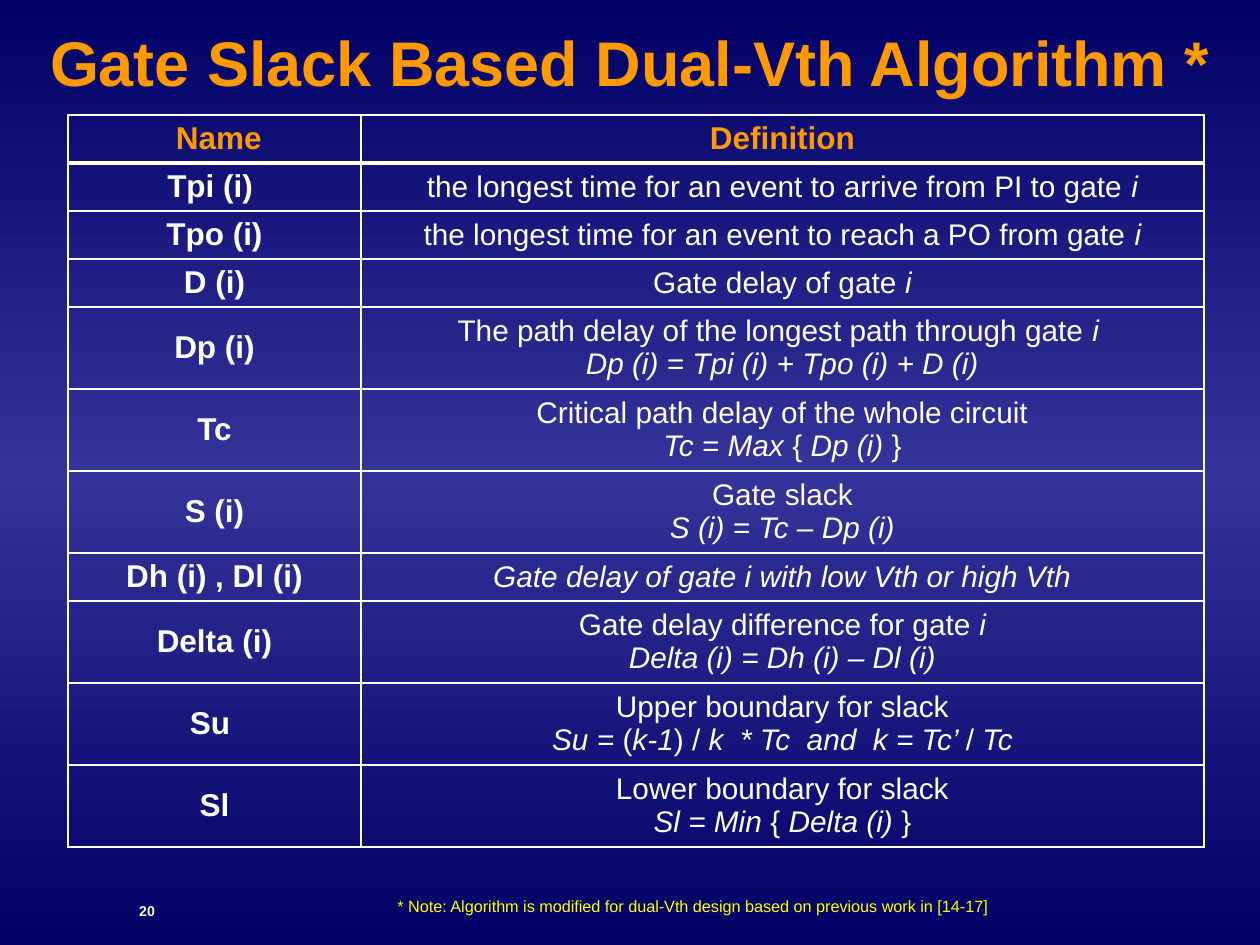
from copy import deepcopy
from dataclasses import dataclass

from pptx import Presentation
from pptx import util as u
from pptx.dml.color import RGBColor
from pptx.enum import text
from pptx.oxml import parse_xml
from pptx.oxml.ns import nsdecls, qn

PX = 914400 / 126


@dataclass(frozen=True)
class Theme:
    font: str = "Arial"
    edge: str = "000066"
    middle: str = "333399"
    accent: str = "FF9900"
    body: str = "FFFFFF"
    note: str = "FFFF00"
    title_size: int = 36
    name_size: int = 18
    definition_size: int = 17
    note_size: int = 16
    number_size: int = 14


theme = Theme()


def px(*lengths):
    return [u.Emu(round(length * PX)) for length in lengths]


def write(frame, lines, size, color, bold=False, subscript=False):
    """Write centred lines; underscores switch italics on and off."""
    frame.word_wrap = True
    for index, line in enumerate(lines):
        para = frame.paragraphs[0] if index == 0 else frame.add_paragraph()
        para.alignment = text.PP_ALIGN.CENTER
        for part, words in enumerate(line.split("_")):
            if not words:
                continue
            span = para.add_run()
            span.text = words
            span.font.name = theme.font
            span.font.size = u.Pt(size)
            span.font.bold = bold
            span.font.italic = part % 2 == 1
            span.font.color.rgb = RGBColor.from_string(color)
            if subscript:
                span.font._element.set("baseline", "-25000")


deck = Presentation()
deck.slide_width, deck.slide_height = px(1260, 945)
page = deck.slides.add_slide(deck.slide_layouts[5])

# Background: dark edges, lighter middle
backdrop = page.background.fill
backdrop.gradient()
backdrop.gradient_angle = 270
stop_list = page.element.find(".//" + qn("a:gsLst"))
stop_list.append(deepcopy(stop_list[-1]))
stops = [(0, theme.edge), (0.5, theme.middle), (1, theme.edge)]
for stop, (position, color) in zip(backdrop.gradient_stops, stops):
    stop.position = position
    stop.color.rgb = RGBColor.from_string(color)

# Title
title = page.shapes.title
title.left, title.top, title.width, title.height = px(0, 10, 1260, 103)
title.text_frame.auto_size = text.MSO_AUTO_SIZE.NONE
title.text_frame.vertical_anchor = text.MSO_ANCHOR.MIDDLE
write(title.text_frame, ["Gate Slack Based Dual-Vth Algorithm *"],
      theme.title_size, theme.accent, bold=True)

# Table of terms
terms = [
    (" Name", ["Definition"]),
    ("Tpi (i) ", ["the longest time for an event to arrive from PI to gate _i_"]),
    ("Tpo (i)", ["the longest time for an event to reach a PO from gate _i_"]),
    ("D (i)", ["Gate delay of gate _i_"]),
    ("Dp (i)", ["The path delay of the longest path through gate _i _",
                "_Dp (i) = Tpi (i) + Tpo (i) + D (i)_"]),
    ("Tc", ["Critical path delay of the whole circuit",
            "_Tc = Max _{ _Dp (i)_ }"]),
    ("S (i)", ["Gate slack", "_S (i) = Tc – Dp (i)_"]),
    ("Dh (i) , Dl (i)", ["_Gate delay of gate i with low Vth or high Vth_"]),
    ("Delta (i)", ["Gate delay difference for gate _i_",
                   "_Delta (i) = Dh (i) – Dl (i)_"]),
    ("Su ", ["Upper boundary for slack",
             "_Su =_ (_k-1_) /_ k  * Tc  and  k = Tc’ _/ _Tc_"]),
    ("Sl", ["Lower boundary for slack", "_Sl = Min _{_ Delta (i) _}"]),
]
column_widths = [293, 843]
row_heights = [48 if len(lines) == 1 else 82 for _, lines in terms]
table = page.shapes.add_table(
    len(terms), len(column_widths),
    *px(68, 115, sum(column_widths), sum(row_heights))).table
table.first_row = table.horz_banding = False
for column, width in zip(table.columns, px(*column_widths)):
    column.width = width
for row, height in zip(table.rows, px(*row_heights)):
    row.height = height

for row, (name, definition) in enumerate(terms):
    header = row == 0
    for column, lines in enumerate([[name], definition]):
        cell = table.cell(row, column)
        cell.fill.background()
        cell.vertical_anchor = text.MSO_ANCHOR.MIDDLE
        strong = header or column == 0
        write(cell.text_frame, lines,
              theme.name_size if strong else theme.definition_size,
              theme.accent if header else theme.body, bold=strong)
        weights = {"L": 1, "R": 1, "T": 3 if row == 1 else 1, "B": 3 if header else 1}
        for index, (side, weight) in enumerate(weights.items()):
            cell._tc.get_or_add_tcPr().insert(index, parse_xml(
                f'<a:ln{side} {nsdecls("a")} w="{u.Pt(weight)}"><a:solidFill>'
                f'<a:srgbClr val="{theme.body}"/></a:solidFill></a:ln{side}>'))

# Page number and footnote, both lowered
number = page.shapes.add_textbox(*px(0, 880, 294, 65))
write(number.text_frame, ["20"], theme.number_size, theme.body,
      bold=True, subscript=True)
note = page.shapes.add_textbox(*px(165, 871, 1060, 47))
write(note.text_frame,
      ["* Note: Algorithm is modified for dual-Vth design based on previous work in [14-17] "],
      theme.note_size, theme.note, subscript=True)

deck.save("out.pptx")
